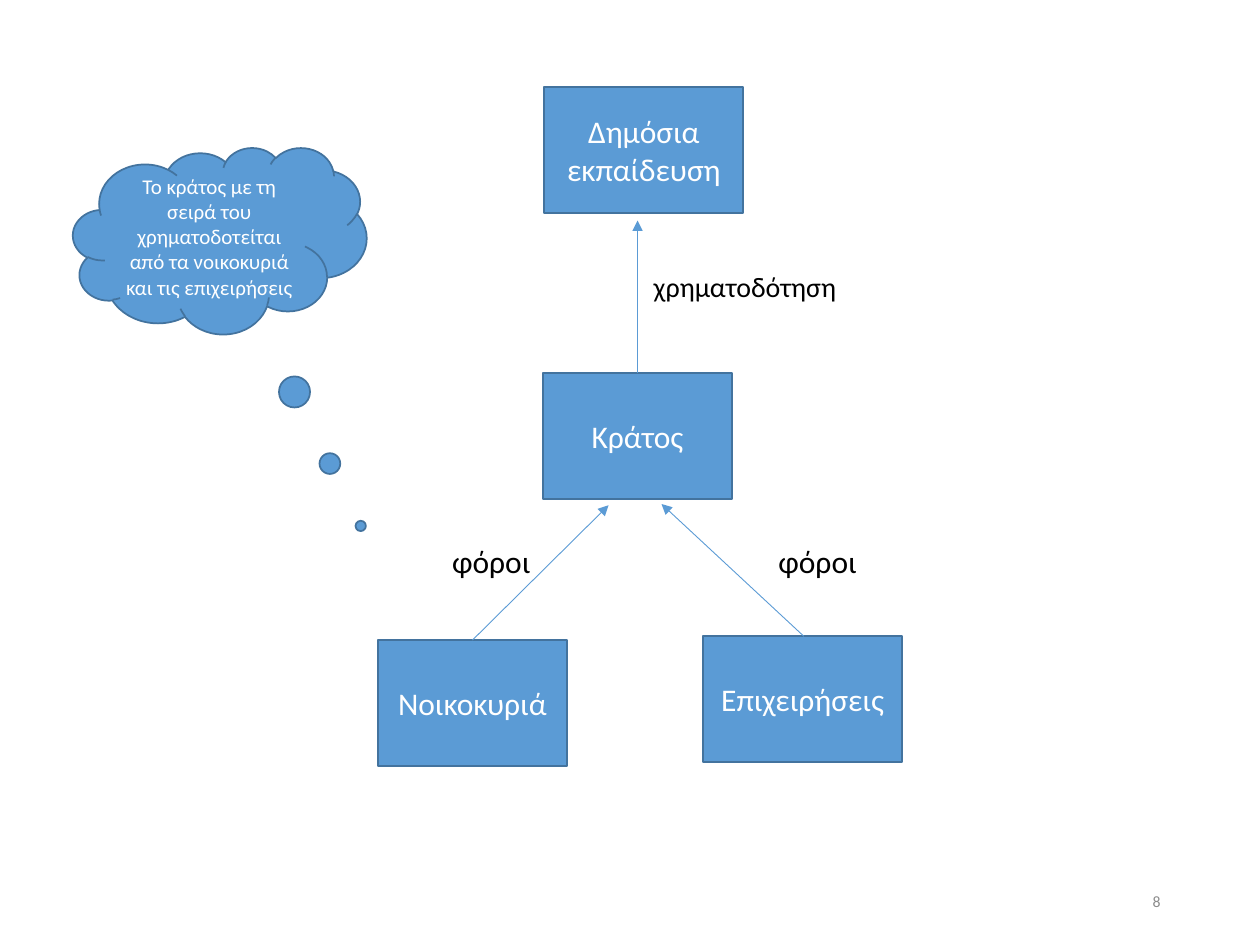
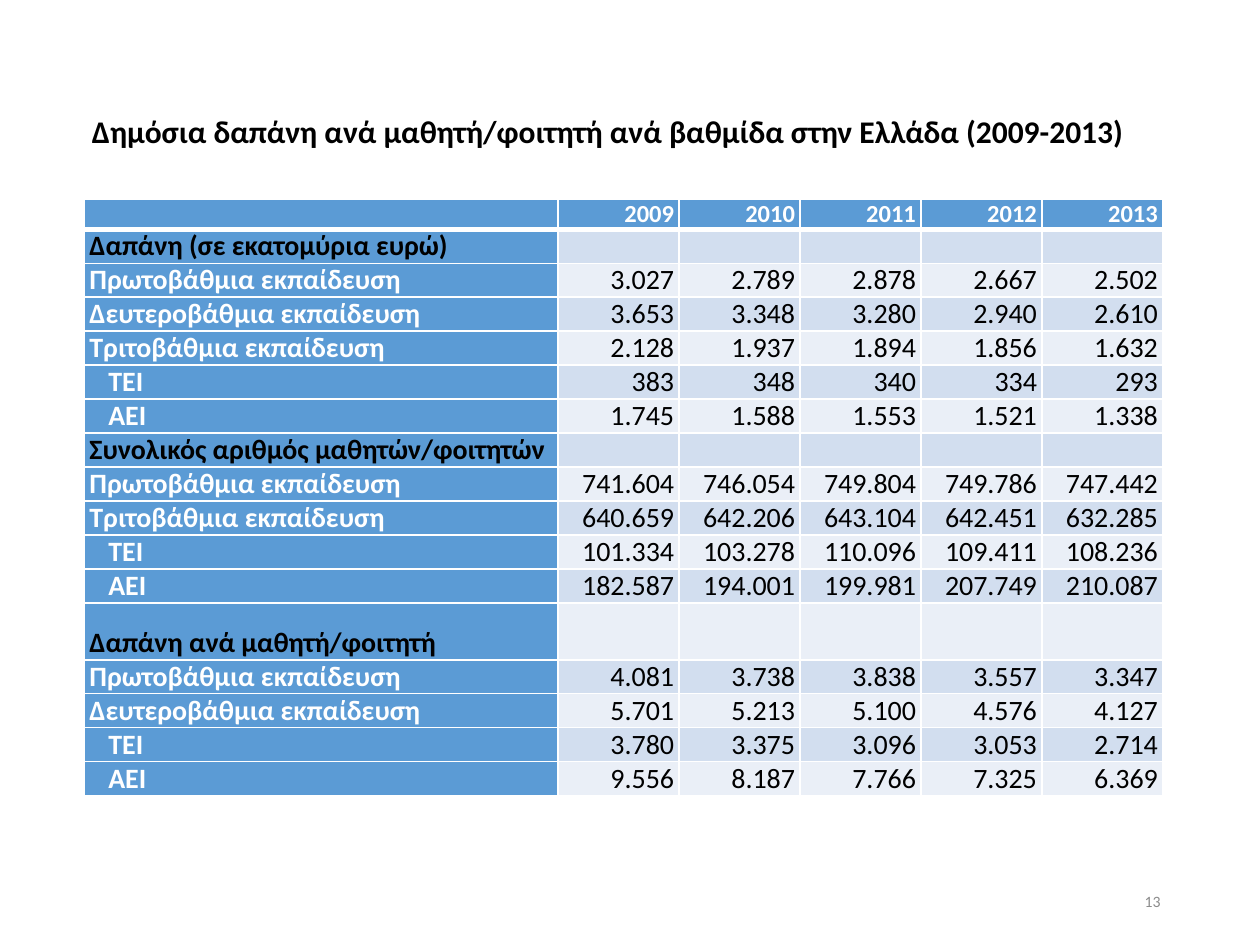
from dataclasses import dataclass

from lxml import etree
from pptx import Presentation
from pptx import util as u
from pptx.dml.color import RGBColor
from pptx.enum import shapes as sh, text as tx
from pptx.oxml import ns

# Shared style
FONT = "Calibri"
BLUE, EDGE = "5B9BD5", "43739E"
WHITE, BLACK, GREY = "FFFFFF", "000000", "8C8C8C"
BANDS = ("D2DEEF", "EAEFF7")
LEFT, MID, RIGHT = tx.PP_ALIGN.LEFT, tx.PP_ALIGN.CENTER, tx.PP_ALIGN.RIGHT
RECT, CLOUD = sh.MSO_SHAPE.RECTANGLE, sh.MSO_SHAPE.CLOUD_CALLOUT

# The slide is a grid of 100 columns by 75 rows, each 0.1 inch
COLS, ROWS = 100, 75
UNIT = u.Inches(0.1)


@dataclass
class Area:
    col: float
    row: float
    wide: float
    high: float

    def place(self) -> list:
        return grid(self.col, self.row, self.wide, self.high)


@dataclass
class Node:
    label: str
    area: Area
    kind: int = RECT
    size: int = 18
    tip: tuple = ()


@dataclass
class Arrow:
    start: tuple
    end: tuple


@dataclass
class Note:
    label: str
    area: Area
    size: int = 18


@dataclass
class Line:
    label: str
    values: str = ""
    high: float = 2.7
    sub: bool = False


def grid(*steps: float) -> list:
    return [u.Emu(round(s * UNIT)) for s in steps]


def paint(code: str) -> RGBColor:
    return RGBColor.from_string(code)


def write(frame, label: str, size: int, color: str, side=LEFT, bold: bool = False) -> None:
    frame.text = label
    para = frame.paragraphs[0]
    para.alignment = side
    for run in para.runs:
        run.font.name, run.font.size, run.font.bold = FONT, u.Pt(size), bold
        run.font.color.rgb = paint(color)


def draw_node(slide, node: Node) -> None:
    box = slide.shapes.add_shape(node.kind, *node.area.place())
    box.shadow.inherit = False
    box.fill.solid()
    box.fill.fore_color.rgb = paint(BLUE)
    box.line.color.rgb = paint(EDGE)
    box.line.width = u.Pt(1)
    for i, value in enumerate(node.tip):
        box.adjustments[i] = value
    box.text_frame.word_wrap = True
    box.text_frame.vertical_anchor = tx.MSO_ANCHOR.MIDDLE
    write(box.text_frame, node.label, node.size, WHITE, MID)


def draw_arrow(slide, arrow: Arrow) -> None:
    link = slide.shapes.add_connector(
        sh.MSO_CONNECTOR.STRAIGHT, *grid(*arrow.start, *arrow.end))
    link.line.color.rgb = paint(BLUE)
    link.line.width = u.Pt(0.5)
    etree.SubElement(link.line._get_or_add_ln(), ns.qn("a:tailEnd"), type="triangle")
    etree.SubElement(link._element.spPr, ns.qn("a:effectLst"))


def draw_note(slide, note: Note) -> None:
    box = slide.shapes.add_textbox(*note.area.place())
    box.text_frame.word_wrap = False
    write(box.text_frame, note.label, note.size, BLACK)


def draw_page(slide, page: int) -> None:
    box = slide.shapes.add_textbox(*Area(70.6, 69.5, 22.5, 4).place())
    box.text_frame.word_wrap = True
    box.text_frame.vertical_anchor = tx.MSO_ANCHOR.MIDDLE
    write(box.text_frame, str(page), 9, GREY, RIGHT)


def draw_title(slide, label: str) -> None:
    head = slide.shapes.title
    head.left, head.top, head.width, head.height = Area(6.3, 8.4, 84.7, 4).place()
    frame = head.text_frame
    frame.word_wrap = False
    frame.auto_size = tx.MSO_AUTO_SIZE.NONE
    frame.vertical_anchor = tx.MSO_ANCHOR.TOP
    write(frame, label, 18, BLACK, bold=True)


def add_edges(cell, top: float, base: float) -> None:
    props = cell._tc.get_or_add_tcPr()
    for i, (side, width) in enumerate(zip("LRTB", (1, 1, top, base))):
        edge = etree.Element(ns.qn(f"a:ln{side}"), w=str(u.Pt(width)))
        fill = etree.SubElement(edge, ns.qn("a:solidFill"))
        etree.SubElement(fill, ns.qn("a:srgbClr"), val=WHITE)
        props.insert(i, edge)


def fill_cell(cell, label: str, fill: str, size: int, color: str, side, bold: bool,
              indent: float = 0) -> None:
    cell.fill.solid()
    cell.fill.fore_color.rgb = paint(fill)
    cell.margin_left, cell.margin_right = grid(0.4 + indent, 0.4)
    cell.margin_top = cell.margin_bottom = 0
    cell.vertical_anchor = tx.MSO_ANCHOR.BOTTOM
    write(cell.text_frame, label, size, color, side, bold)
    if not label:
        para = cell.text_frame.paragraphs[0]._p
        etree.SubElement(para, ns.qn("a:endParaRPr"), sz=str(size * 100))


def draw_table(slide, lines: list, area: Area, widths: list) -> None:
    table = slide.shapes.add_table(len(lines), len(widths), *area.place()).table
    for column, width in zip(table.columns, grid(*widths)):
        column.width = width
    for r, line in enumerate(lines):
        table.rows[r].height = grid(line.high)[0]
        values = line.values.split() or [""] * (len(widths) - 1)
        top, base = (3 if r == 1 else 1), (3 if r == 0 else 1)
        size = 16 if r else 14
        group = BLACK if not line.values else WHITE
        for c, label in enumerate([line.label, *values]):
            cell = table.cell(r, c)
            if c == 0:
                fill_cell(cell, label, BLUE, size, group, LEFT, True, 1.5 * line.sub)
            elif r == 0:
                fill_cell(cell, label, BLUE, size, WHITE, RIGHT, True)
            else:
                fill_cell(cell, label, BANDS[(r - 1) % 2], size, BLACK, RIGHT, False)
            add_edges(cell, top, base)


# Slide 1: who funds public education
STATE = Node("Κράτος", Area(43.1, 29.6, 15, 10))
NODES = [
    STATE,
    Node("Δημόσια εκπαίδευση", Area(43.2, 6.9, 15.8, 10)),
    Node("Νοικοκυριά", Area(30, 50.8, 15, 10)),
    Node("Επιχειρήσεις", Area(55.8, 50.5, 15.8, 10)),
]
ARROWS = [
    Arrow((37.5, 50.8), (48.3, 40.1)),
    Arrow((63.8, 50.5), (52.5, 40)),
    Arrow((50.6, 29.6), (50.6, 17.5)),
]
NOTES = [
    Note("φόροι", Area(34.9, 42.5, 8.3, 4)),
    Note("φόροι", Area(60.8, 42.5, 8.3, 4)),
    Note("χρηματοδότηση", Area(50.9, 20.9, 16.7, 3.7), 16),
]
THOUGHT = Node(
    "Το κράτος με τη σειρά του χρηματοδοτείται από τα νοικοκυριά και τις επιχειρήσεις",
    Area(5.8, 11.7, 23.3, 14.8), CLOUD, 12, (0.48, 1.53))

# Slide 2: spending per student
FIRST, SECOND, THIRD = (f"{level} εκπαίδευση" for level in (
    "Πρωτοβάθμια", "Δευτεροβάθμια", "Τριτοβάθμια"))
LINES = [
    Line("", "2009 2010 2011 2012 2013", 2.4),
    Line("Δαπάνη (σε εκατομύρια ευρώ)"),
    Line(FIRST, "3.027 2.789 2.878 2.667 2.502"),
    Line(SECOND, "3.653 3.348 3.280 2.940 2.610"),
    Line(THIRD, "2.128 1.937 1.894 1.856 1.632"),
    Line("TEI", "383 348 340 334 293", sub=True),
    Line("AEI", "1.745 1.588 1.553 1.521 1.338", sub=True),
    Line("Συνολικός αριθμός μαθητών/φοιτητών"),
    Line(FIRST, "741.604 746.054 749.804 749.786 747.442"),
    Line(THIRD, "640.659 642.206 643.104 642.451 632.285"),
    Line("TEI", "101.334 103.278 110.096 109.411 108.236", sub=True),
    Line("AEI", "182.587 194.001 199.981 207.749 210.087", sub=True),
    Line("Δαπάνη ανά μαθητή/φοιτητή", high=4.5),
    Line(FIRST, "4.081 3.738 3.838 3.557 3.347"),
    Line(SECOND, "5.701 5.213 5.100 4.576 4.127"),
    Line("TEI", "3.780 3.375 3.096 3.053 2.714", sub=True),
    Line("AEI", "9.556 8.187 7.766 7.325 6.369", sub=True),
]


def main() -> None:
    deck = Presentation()
    deck.slide_width, deck.slide_height = grid(COLS, ROWS)
    bare, titled = deck.slide_layouts[6], deck.slide_layouts[5]

    flow = deck.slides.add_slide(bare)
    draw_page(flow, 8)
    for node in NODES:
        draw_node(flow, node)
    for arrow in ARROWS:
        draw_arrow(flow, arrow)
    for note in NOTES:
        draw_note(flow, note)
    draw_node(flow, THOUGHT)

    costs = deck.slides.add_slide(titled)
    draw_page(costs, 13)
    draw_table(costs, LINES, Area(6.7, 15.8, 85.6, 46.8), [37.6] + [9.6] * 5)
    draw_title(costs, "Δημόσια δαπάνη ανά μαθητή/φοιτητή ανά βαθμίδα στην Ελλάδα (2009-2013)")

    deck.save("out.pptx")


if __name__ == "__main__":
    main()
